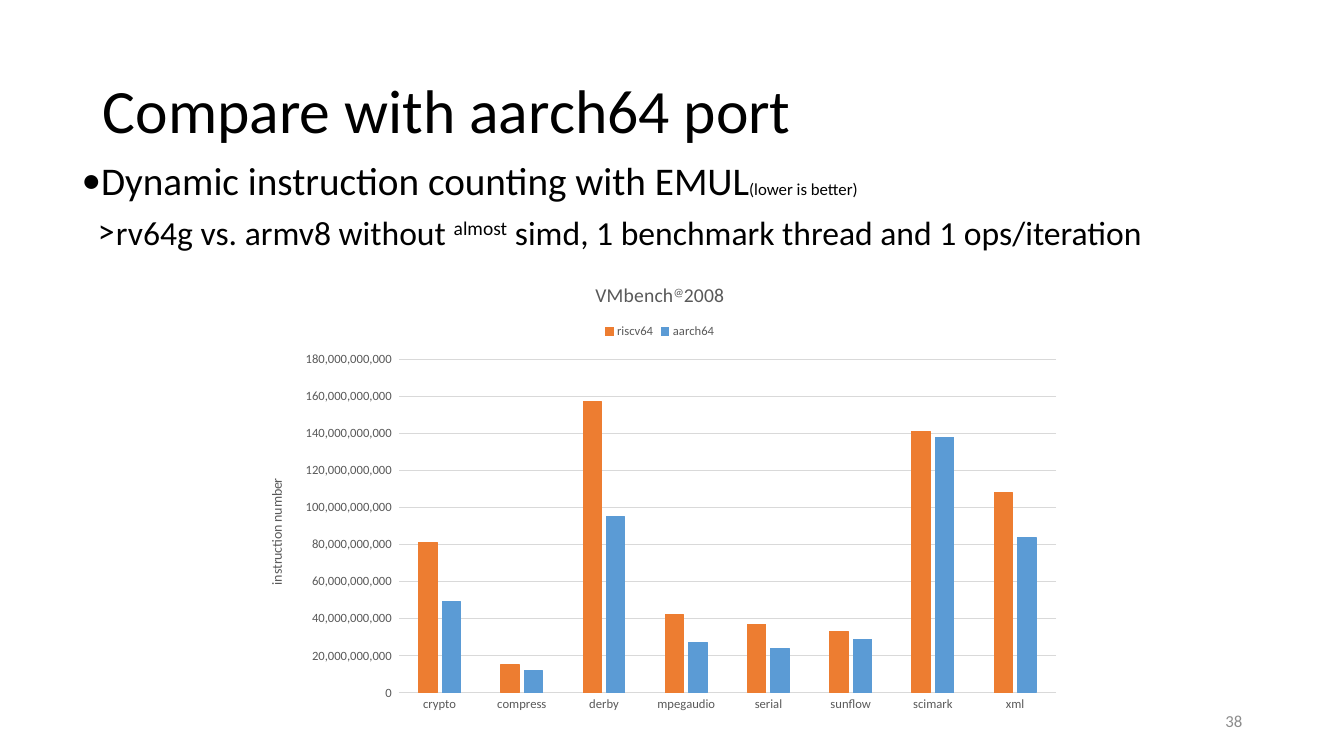
"""Build the slide that compares instruction counts of two ports."""
from lxml.etree import SubElement
from pptx import Presentation
from pptx.chart.data import CategoryChartData
from pptx.dml.color import RGBColor
from pptx.enum.chart import XL_CHART_TYPE, XL_LEGEND_POSITION, XL_TICK_MARK
from pptx.enum.text import MSO_ANCHOR, PP_ALIGN
from pptx.oxml.ns import qn
from pptx.util import Inches, Pt

HUES = {"ink": "000000", "grey": "595959", "pale": "8C8C8C",
        "rule": "D9D9D9", "risc": "ED7D31", "aarch": "5B9BD5"}
FLUSH = {"margin_left": 0, "margin_right": 0, "margin_top": 0, "margin_bottom": 0}
MIDDLE = {"vertical_anchor": MSO_ANCHOR.MIDDLE}
CATS = ["crypto", "compress", "derby", "mpegaudio", "serial", "sunflow", "scimark", "xml"]
COUNTS = [("riscv64", "risc", [81, 15, 157, 42, 37, 33, 141, 108]),
          ("aarch64", "aarch", [49, 12, 95, 27, 24, 29, 138, 84])]


def apply(item, style):
    for name, value in style.items():
        setattr(item, name, value)


def tint(name):
    return RGBColor.from_string(HUES[name])


class Deck:
    def __init__(self):
        self.show = Presentation()
        apply(self.show, {"slide_width": Inches(13.33), "slide_height": Inches(7.5)})
        self.page = self.show.slides.add_slide(self.show.slide_layouts[5])
        self.face = "Calibri"

    def place(self, *share):
        wide, high = self.show.slide_width, self.show.slide_height
        return [int(part * side / 100) for part, side in zip(share, (wide, high) * 2)]

    def font(self, font, size, hue="ink"):
        apply(font, {"name": self.face, "size": Pt(size), "bold": False})
        font.color.rgb = tint(hue)

    def runs(self, para, parts, hue="ink"):
        for words, size, lift in parts:
            run = para.add_run()
            run.text = words
            self.font(run.font, size, hue)
            if lift:
                run.font._element.set("baseline", str(lift * 1000))

    def title(self, words, share):
        head = self.page.shapes.title
        apply(head, dict(zip(("left", "top", "width", "height"), self.place(*share))))
        apply(head.text_frame, {"word_wrap": True, **MIDDLE})
        para = head.text_frame.paragraphs[0]
        apply(para, {"alignment": PP_ALIGN.LEFT, "line_spacing": 0.9})
        self.runs(para, [(words, 44, 0)])

    def box(self, share, style):
        frame = self.page.shapes.add_textbox(*self.place(*share)).text_frame
        apply(frame, {"word_wrap": True, **style})
        return frame

    def points(self, rows, share):
        frame = self.box(share, FLUSH)
        for level, (mark, left, parts) in enumerate(rows):
            para = frame.add_paragraph() if level else frame.paragraphs[0]
            apply(para, {"level": level, "space_after": Pt(6)})
            self.runs(para, parts)
            props = para._p.get_or_add_pPr()
            props.set("marL", str(Inches(left)))
            props.set("indent", str(Inches(-0.18)))
            shade = SubElement(props, qn("a:buClr"))
            SubElement(shade, qn("a:srgbClr"), val=HUES["ink"])
            SubElement(props, qn("a:buFont"), typeface=self.face)
            SubElement(props, qn("a:buChar"), char=mark)

    def number(self, words, share):
        para = self.box(share, MIDDLE).paragraphs[0]
        para.alignment = PP_ALIGN.RIGHT
        self.runs(para, [(words, 12, 0)], "pale")

    def line(self, form, hue):
        form.line.color.rgb = tint(hue)
        form.line.width = Pt(0.75)

    def chart(self, heading, label, share):
        data = CategoryChartData(number_format="#,##0_ ")
        data.categories = CATS
        for name, _, counts in COUNTS:
            data.add_series(name, [count * 10**9 for count in counts])
        kind = XL_CHART_TYPE.COLUMN_CLUSTERED
        chart = self.page.shapes.add_chart(kind, *self.place(*share), data).chart
        self.font(chart.font, 10)
        apply(chart, {"has_title": True, "has_legend": True})
        self.runs(chart.chart_title.text_frame.paragraphs[0], heading, "grey")
        apply(chart.legend, {"position": XL_LEGEND_POSITION.TOP, "include_in_layout": False})
        self.font(chart.legend.font, 9, "grey")
        plot = chart.plots[0]
        apply(plot, {"gap_width": 219, "overlap": -27, "vary_by_categories": False})
        for bars, (_, hue, _) in zip(plot.series, COUNTS):
            bars.format.fill.solid()
            bars.format.fill.fore_color.rgb = tint(hue)
            self.line(bars.format, hue)
        cats, vals = chart.category_axis, chart.value_axis
        for axis in (cats, vals):
            apply(axis, {"major_tick_mark": XL_TICK_MARK.NONE,
                         "minor_tick_mark": XL_TICK_MARK.NONE})
            self.font(axis.tick_labels.font, 9, "grey")
        self.line(cats.format, "rule")
        apply(vals, {"has_title": True, "has_major_gridlines": True, "minimum_scale": 0,
                     "maximum_scale": 180 * 10**9, "major_unit": 20 * 10**9})
        apply(vals.tick_labels, {"number_format": "#,##0_ ", "number_format_is_linked": False})
        vals.format.line.fill.background()
        self.line(vals.major_gridlines.format, "rule")
        self.runs(vals.axis_title.text_frame.paragraphs[0], [(label, 10, 0)], "grey")


def main():
    deck = Deck()
    deck.title("Compare with aarch64 port", (6.9, 5.33, 86.27, 19.33))
    deck.points([
        ("•", 0.2, [("Dynamic instruction counting with EMUL", 28, 0),
                    ("(lower is better)", 12, 0)]),
        (">", 0.36, [("rv64g vs. armv8 without ", 24, 0), ("almost", 24, 30),
                     (" simd, 1 benchmark thread and 1 ops/iteration", 24, 0)]),
    ], (5.93, 20.67, 89.42, 73.47))
    deck.chart([("VMbench", 14, 0), ("@", 14, 30), ("2008", 14, 0)],
               "instruction number", (18.38, 34.93, 61.44, 60.4))
    deck.number("38", (70.67, 92.67, 22.5, 5.33))
    deck.show.save("out.pptx")


if __name__ == "__main__":
    main()
